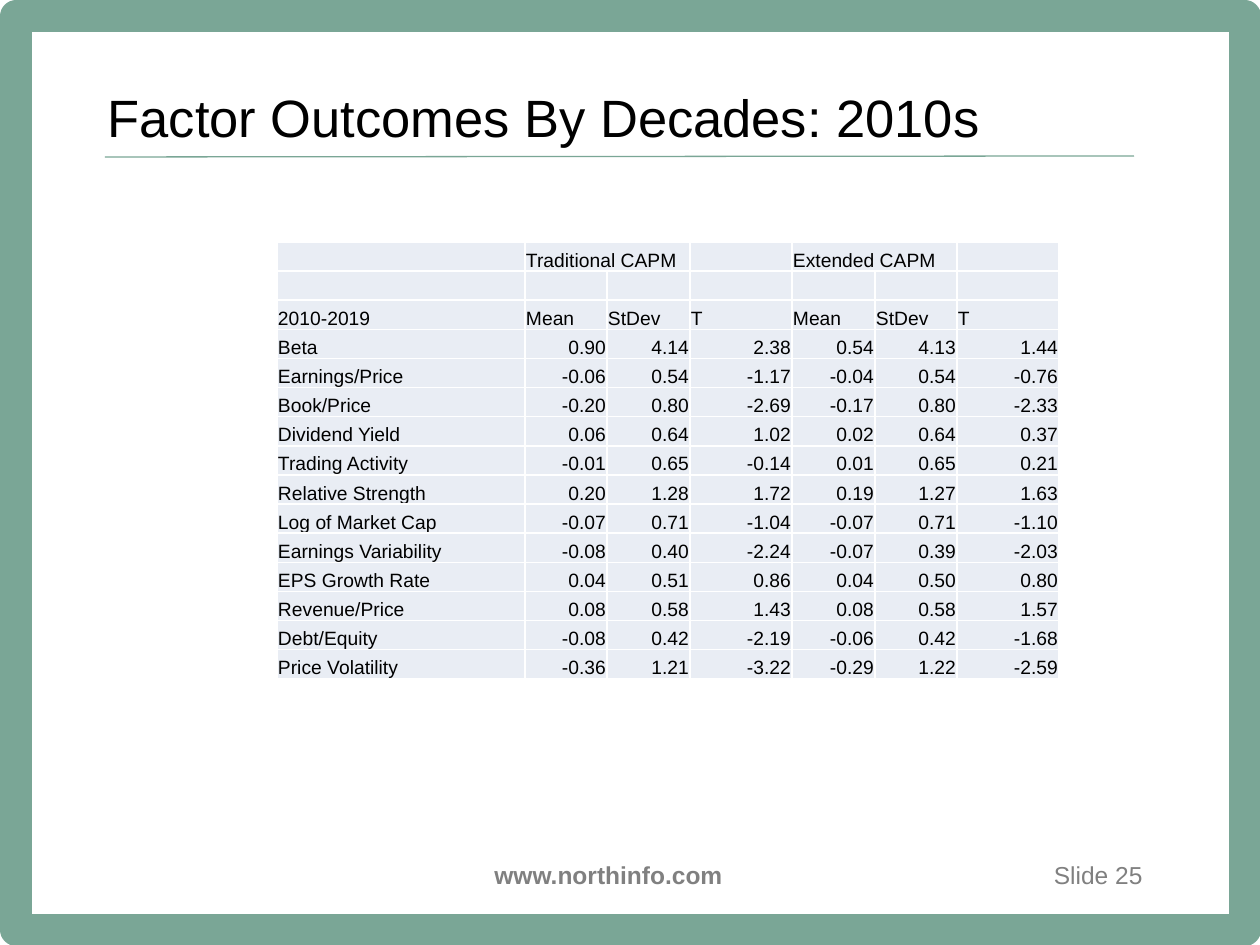
import lxml.etree
import pptx
import pptx.dml.color
import pptx.enum.shapes
import pptx.enum.text
import pptx.oxml.ns
import pptx.util

PX = 914400 / 126
FONT = "Arial"
COLORS = {
    "frame": "7AA696",
    "title": "000000",
    "footer": "808080",
    "cell": "E9EDF4",
    "border": "FFFFFF",
}
ALIGN = pptx.enum.text.PP_ALIGN
ANCHOR = pptx.enum.text.MSO_ANCHOR

COLUMN_WIDTHS = [248, 82, 83, 102, 83, 82, 102]
HEADER_ROWS = 3
ROWS = [
    ["", "Traditional CAPM", "", "", "Extended CAPM", "", ""],
    [""] * 7,
    ["2010-2019"] + ["Mean", "StDev", "T"] * 2,
    ["Beta", "0.90", "4.14", "2.38", "0.54", "4.13", "1.44"],
    ["Earnings/Price", "-0.06", "0.54", "-1.17", "-0.04", "0.54", "-0.76"],
    ["Book/Price", "-0.20", "0.80", "-2.69", "-0.17", "0.80", "-2.33"],
    ["Dividend Yield", "0.06", "0.64", "1.02", "0.02", "0.64", "0.37"],
    ["Trading Activity", "-0.01", "0.65", "-0.14", "0.01", "0.65", "0.21"],
    ["Relative Strength", "0.20", "1.28", "1.72", "0.19", "1.27", "1.63"],
    ["Log of Market Cap", "-0.07", "0.71", "-1.04", "-0.07", "0.71", "-1.10"],
    ["Earnings Variability", "-0.08", "0.40", "-2.24", "-0.07", "0.39", "-2.03"],
    ["EPS Growth Rate", "0.04", "0.51", "0.86", "0.04", "0.50", "0.80"],
    ["Revenue/Price", "0.08", "0.58", "1.43", "0.08", "0.58", "1.57"],
    ["Debt/Equity", "-0.08", "0.42", "-2.19", "-0.06", "0.42", "-1.68"],
    ["Price Volatility", "-0.36", "1.21", "-3.22", "-0.29", "1.22", "-2.59"],
]


def px(length):
    return pptx.util.Emu(round(length * PX))


def color(name):
    return pptx.dml.color.RGBColor.from_string(COLORS[name])


def add_element(parent, tag, **attributes):
    return lxml.etree.SubElement(parent, pptx.oxml.ns.qn(tag), attributes)


def write(paragraph, text, size, color_name, align=ALIGN.LEFT, bold=False):
    paragraph.text = text
    paragraph.alignment = align
    for run in paragraph.runs:
        run.font.name = FONT
        run.font.size = pptx.util.Pt(size)
        run.font.bold = bold
        run.font.color.rgb = color(color_name)


def add_frame(slide, left, top, width, height):
    frame = slide.shapes.add_shape(
        pptx.enum.shapes.MSO_SHAPE.RECTANGLE, px(left), px(top), px(width), px(height))
    frame.shadow.inherit = False
    frame.fill.background()
    frame.line.color.rgb = color("frame")
    frame.line.width = pptx.util.Pt(18)


def add_title(slide, left, top, width, height):
    title = slide.shapes.title
    title.left, title.top = px(left), px(top)
    title.width, title.height = px(width), px(height)
    title.text_frame.vertical_anchor = ANCHOR.MIDDLE
    write(title.text_frame.paragraphs[0], "Factor Outcomes By Decades: 2010s", 30, "title")

    rule = slide.shapes.add_connector(
        pptx.enum.shapes.MSO_CONNECTOR.STRAIGHT,
        px(left + 10), px(top + 84), px(left + 1039), px(top + 83))
    rule.line.color.rgb = color("frame")
    rule.line.width = pptx.util.Pt(0.75)
    add_element(rule._element.spPr, "a:effectLst")


def add_footer_text(slide, text, left, top, width, height, align, bold=False):
    box = slide.shapes.add_textbox(px(left), px(top), px(width), px(height))
    box.text_frame.word_wrap = True
    write(box.text_frame.paragraphs[0], text, 14, "footer", align, bold)


def add_footer(slide, left, top, width, height):
    add_footer_text(slide, "www.northinfo.com", left, top, 323, height, ALIGN.CENTER, True)
    add_footer_text(slide, "Slide 25", left + width - 158, top, 158, height, ALIGN.RIGHT)


def add_borders(cell):
    properties = cell._tc.get_or_add_tcPr()
    for tag in ("a:lnL", "a:lnR", "a:lnT", "a:lnB"):
        line = add_element(properties, tag, w="12700")
        fill = add_element(line, "a:solidFill")
        add_element(fill, "a:srgbClr", val=COLORS["border"])


def format_cell(cell, text, align):
    cell.margin_left = cell.margin_right = cell.margin_top = px(1)
    cell.margin_bottom = 0
    cell.vertical_anchor = ANCHOR.BOTTOM
    paragraph = cell.text_frame.paragraphs[0]
    write(paragraph, text, 11, "title", align)
    if not text:
        add_element(paragraph._p, "a:endParaRPr", sz="1100")
    add_borders(cell)
    cell.fill.solid()
    cell.fill.fore_color.rgb = color("cell")


def add_factor_table(slide, left, top, width, height):
    table = slide.shapes.add_table(
        len(ROWS), len(COLUMN_WIDTHS), px(left), px(top), px(width), px(height)).table
    for column, column_width in zip(table.columns, COLUMN_WIDTHS):
        column.width = px(column_width)
    for row_index, values in enumerate(ROWS):
        table.rows[row_index].height = px(height / len(ROWS))
        for column_index, text in enumerate(values):
            is_number = row_index >= HEADER_ROWS and column_index > 0
            align = ALIGN.RIGHT if is_number else ALIGN.LEFT
            format_cell(table.cell(row_index, column_index), text, align)
    for first in (1, 4):
        table.cell(0, first).merge(table.cell(0, first + 1))


def main():
    presentation = pptx.Presentation()
    presentation.slide_width, presentation.slide_height = px(1260), px(945)
    slide = presentation.slides.add_slide(presentation.slide_layouts[5])
    add_frame(slide, 16, 16, 1229, 914)
    add_title(slide, 95, 73, 1134, 87)
    add_factor_table(slide, 277, 242, sum(COLUMN_WIDTHS), 437)
    add_footer(slide, 447, 854, 708, 42)
    presentation.save("out.pptx")


if __name__ == "__main__":
    main()
